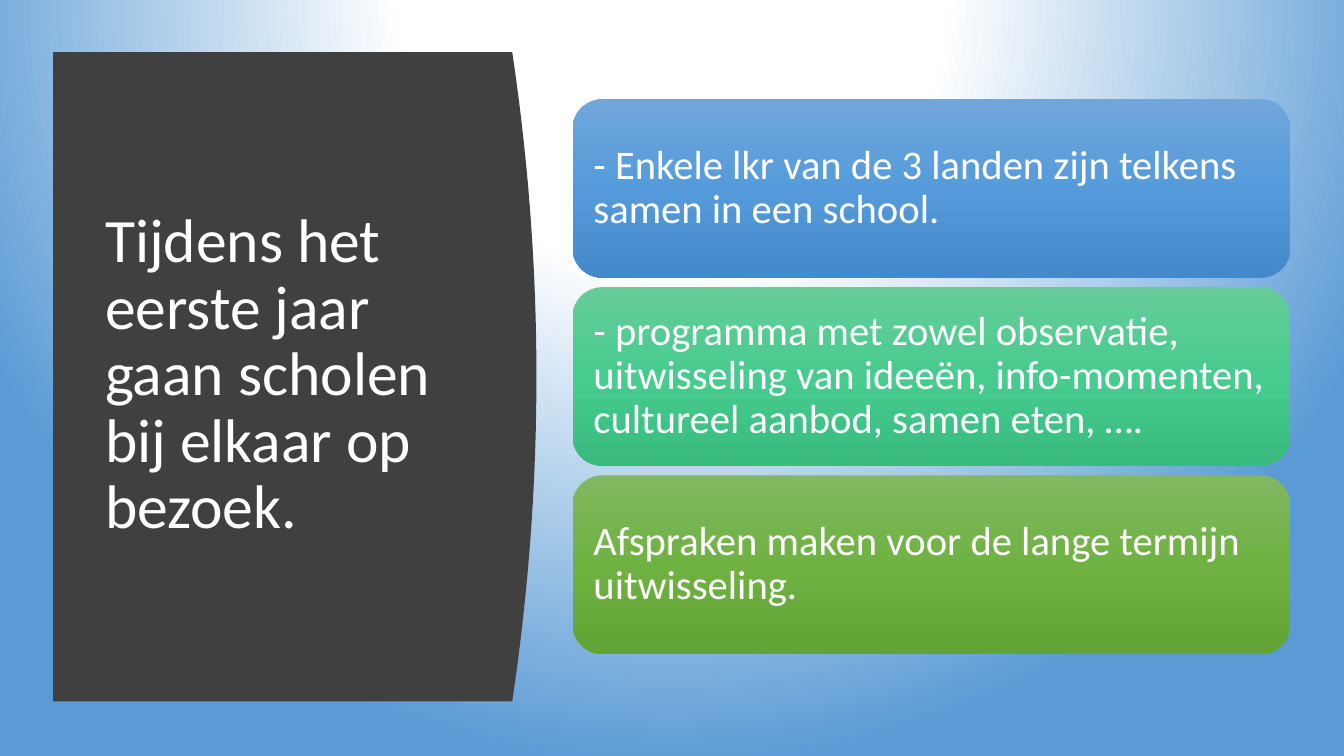
from dataclasses import dataclass

from lxml import etree
from pptx import Presentation
from pptx.dml.color import RGBColor
from pptx.enum.shapes import MSO_SHAPE
from pptx.enum.text import MSO_ANCHOR, PP_ALIGN
from pptx.oxml.ns import qn
from pptx.util import Pt

ROUNDED = MSO_SHAPE.ROUNDED_RECTANGLE
MIDDLE = MSO_ANCHOR.MIDDLE
LEFT = PP_ALIGN.LEFT


@dataclass(frozen=True)
class Theme:
    font: str = "Calibri"
    title_size: float = 44
    card_size: float = 29
    text: str = "FFFFFF"
    panel: str = "404040"
    backdrop: tuple = ((0, "FFFFFF"), (35, "FFFFFF"), (100, "5B9BD5"))
    blue: tuple = ((0, "71A6DB"), (50, "559BDB"), (100, "448ACA"))
    teal: tuple = ((0, "67CC9A"), (50, "47CB8E"), (100, "39BB7F"))
    green: tuple = ((0, "81B861"), (50, "6FB242"), (100, "62A336"))


def set_format(target, values):
    for name, value in values.items():
        setattr(target, name, value)


def set_stops(gradient, stops):
    """Empty the gradient and give it stops of (percent, colour)."""
    for child in list(gradient):
        gradient.remove(child)
    stop_list = etree.SubElement(gradient, qn("a:gsLst"))
    for percent, colour in stops:
        stop = etree.SubElement(stop_list, qn("a:gs"), pos=str(percent * 1000))
        etree.SubElement(stop, qn("a:srgbClr"), val=colour)


class SlideBuilder:
    def __init__(self, slide, theme):
        self.slide = slide
        self.theme = theme

    def backdrop(self, stops):
        """Circular gradient centred above the top edge."""
        self.slide.background.fill.gradient()
        gradient = self.slide.element.find(".//" + qn("a:gradFill"))
        set_stops(gradient, stops)
        circle = etree.SubElement(gradient, qn("a:path"), {"path": "circle"})
        etree.SubElement(circle, qn("a:fillToRect"),
                         l="50000", t="-80000", r="50000", b="180000")

    def add_wording(self, shape, wording, size, inset_x, inset_y):
        frame = shape.text_frame
        set_format(frame, {
            "word_wrap": True, "vertical_anchor": MIDDLE,
            "margin_left": Pt(inset_x), "margin_right": Pt(inset_x),
            "margin_top": Pt(inset_y), "margin_bottom": Pt(inset_y),
        })
        paragraph = frame.paragraphs[0]
        set_format(paragraph, {"alignment": LEFT, "line_spacing": 0.9})
        run = paragraph.add_run()
        run.text = wording
        set_format(run.font, {"name": self.theme.font, "size": Pt(size)})
        run.font.color.rgb = RGBColor.from_string(self.theme.text)

    def bulging_panel(self, left, top, width, height, bulge, steps=40):
        """Rectangle whose right side is a parabola."""
        right = left + width
        curve = []
        for step in range(steps + 1):
            offset = 2 * step / steps - 1
            curve.append((Pt(right - bulge * offset ** 2),
                          Pt(top + height * step / steps)))
        outline = self.slide.shapes.build_freeform(Pt(left), Pt(top), scale=1.0)
        outline.add_line_segments(curve + [(Pt(left), Pt(top + height))])
        panel = outline.convert_to_shape()
        panel.shadow.inherit = False
        panel.fill.solid()
        panel.fill.fore_color.rgb = RGBColor.from_string(self.theme.panel)
        panel.line.fill.background()

    def title(self, wording, left, top, width, height):
        heading = self.slide.shapes.add_textbox(
            Pt(left), Pt(top), Pt(width), Pt(height))
        self.add_wording(heading, wording, self.theme.title_size, 7.2, 3.6)

    def card(self, wording, stops, left, top, width, height):
        card = self.slide.shapes.add_shape(
            ROUNDED, Pt(left), Pt(top), Pt(width), Pt(height))
        card.shadow.inherit = False
        card.line.fill.background()
        card.fill.gradient()
        gradient = card.element.spPr.find(qn("a:gradFill"))
        set_stops(gradient, stops)
        etree.SubElement(gradient, qn("a:lin"), ang="5400000", scaled="0")
        self.add_wording(card, wording, self.theme.card_size, 8.7, 8.7)


def main():
    theme = Theme()
    deck = Presentation()
    set_format(deck, {"slide_width": Pt(960), "slide_height": Pt(540)})
    builder = SlideBuilder(deck.slides.add_slide(deck.slide_layouts[6]), theme)

    builder.backdrop(theme.backdrop)

    # Dark panel with the title
    builder.bulging_panel(38, 37.2, 345.2, 463.8, bulge=17.3)
    builder.title("Tijdens het eerste jaar gaan scholen bij elkaar op bezoek.",
                  68, 80, 269, 377)

    # Stack of cards
    cards = [
        ("- Enkele lkr van de 3 landen zijn telkens samen in een school.",
         theme.blue),
        ("- programma met zowel observatie, uitwisseling van ideeën, "
         "info-momenten, cultureel aanbod, samen eten, ….", theme.teal),
        ("Afspraken maken voor de lange termijn uitwisseling.", theme.green),
    ]
    card_height, card_gap = 127.6, 6.8
    for row, (wording, stops) in enumerate(cards):
        card_top = 70.7 + row * (card_height + card_gap)
        builder.card(wording, stops, 409, card_top, 512.6, card_height)

    deck.save("out.pptx")


if __name__ == "__main__":
    main()
